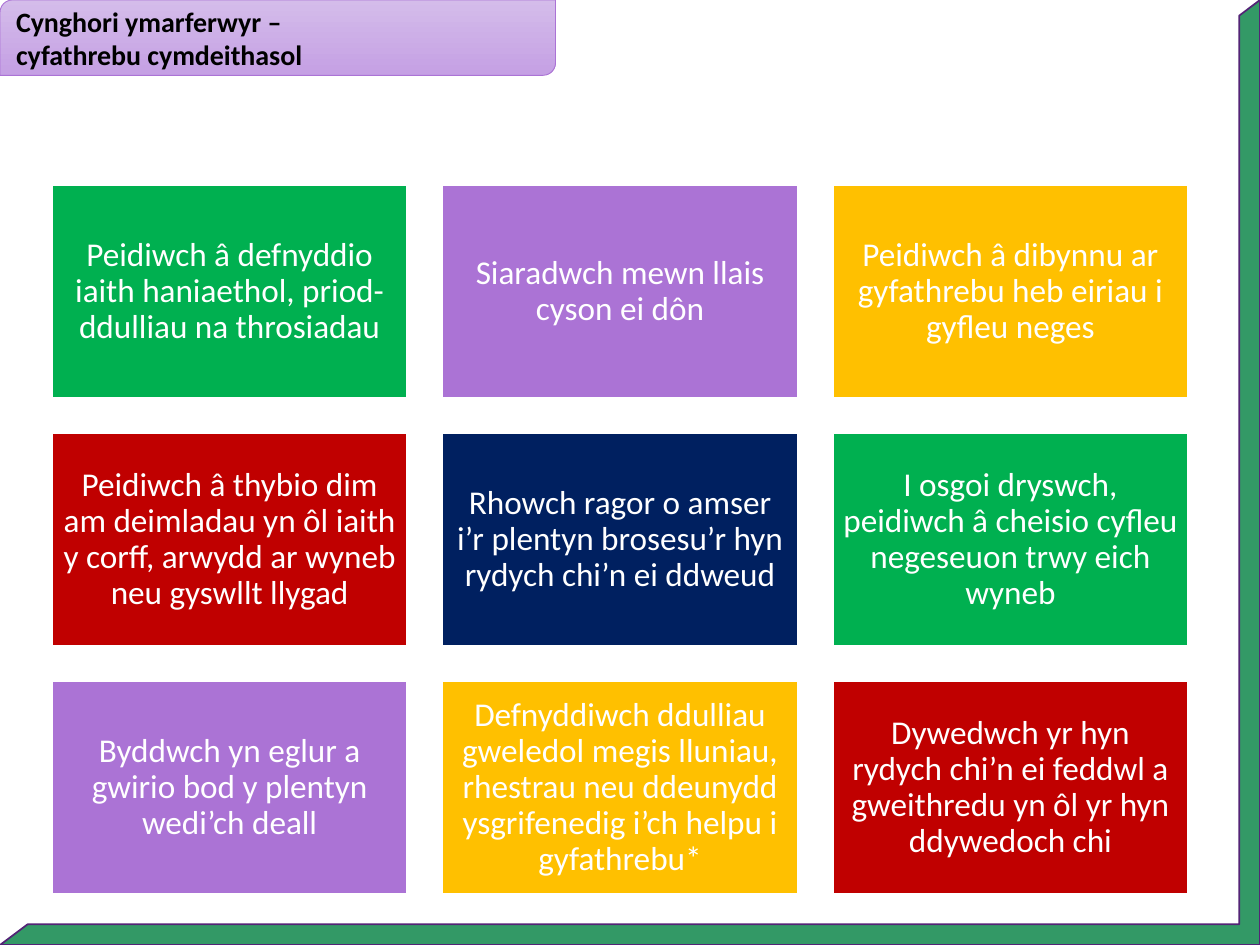
from pptx import Presentation
from pptx.dml.color import RGBColor
from pptx.enum.shapes import MSO_SHAPE
from pptx.enum.text import MSO_ANCHOR, PP_ALIGN
from pptx.util import Cm, Pt

WHITE = RGBColor(0xFF, 0xFF, 0xFF)
BLACK = RGBColor(0x00, 0x00, 0x00)
GREEN = RGBColor(0x00, 0xB0, 0x50)
PURPLE = RGBColor(0xAB, 0x73, 0xD5)
AMBER = RGBColor(0xFF, 0xC0, 0x00)
RED = RGBColor(0xC0, 0x00, 0x00)
NAVY = RGBColor(0x00, 0x20, 0x60)
FRAME_GREEN = RGBColor(0x33, 0x99, 0x66)
FRAME_LINE = RGBColor(0x53, 0x24, 0x76)
LILAC_LIGHT = RGBColor(0xD4, 0xBC, 0xEA)
LILAC_DARK = RGBColor(0xC5, 0xA0, 0xE4)

SLIDE_W, SLIDE_H = 25.4, 19.05
COLUMNS = 3
CARD_W, CARD_H, GAP = 7.16, 4.29, 0.71
GRID_LEFT, GRID_TOP = 1.05, 3.73

TITLE = ["Cynghori ymarferwyr –", "cyfathrebu cymdeithasol"]
CARDS = [
    ("Peidiwch â defnyddio iaith haniaethol, priod-ddulliau na throsiadau", GREEN),
    ("Siaradwch mewn llais cyson ei dôn", PURPLE),
    ("Peidiwch â dibynnu ar gyfathrebu heb eiriau i gyfleu neges", AMBER),
    ("Peidiwch â thybio dim am deimladau yn ôl iaith y corff, "
     "arwydd ar wyneb neu gyswllt llygad", RED),
    ("Rhowch ragor o amser i’r plentyn brosesu’r hyn rydych chi’n ei ddweud", NAVY),
    ("I osgoi dryswch, peidiwch â cheisio cyfleu negeseuon trwy eich wyneb", GREEN),
    ("Byddwch yn eglur a gwirio bod y plentyn wedi’ch deall", PURPLE),
    ("Defnyddiwch ddulliau gweledol megis lluniau, rhestrau neu ddeunydd "
     "ysgrifenedig i’ch helpu i gyfathrebu*", AMBER),
    ("Dywedwch yr hyn rydych chi’n ei feddwl a gweithredu yn ôl "
     "yr hyn ddywedoch chi", RED),
]


class SlideBuilder:
    font = "Calibri"

    def __init__(self, slide):
        self.slide = slide

    def shape(self, kind, left, top, width, height, line, line_width):
        sp = self.slide.shapes.add_shape(kind, Cm(left), Cm(top), Cm(width), Cm(height))
        sp.shadow.inherit = False
        sp.line.color.rgb = line
        sp.line.width = Pt(line_width)
        return sp

    def text(self, sp, lines, size, color, align, bold=False, spacing=1.0):
        tf = sp.text_frame
        tf.word_wrap = True
        tf.vertical_anchor = MSO_ANCHOR.MIDDLE
        for i, line in enumerate(lines):
            p = tf.add_paragraph() if i else tf.paragraphs[0]
            p.alignment = align
            p.line_spacing = spacing
            r = p.add_run()
            r.text = line
            r.font.name = self.font
            r.font.size = Pt(size)
            r.font.bold = bold
            r.font.color.rgb = color

    def frame(self):
        sp = self.shape(MSO_SHAPE.HALF_FRAME, 0, 0, SLIDE_W, SLIDE_H, FRAME_LINE, 1)
        sp.adjustments[0] = sp.adjustments[1] = 0.022
        sp.rotation = 180
        sp.fill.solid()
        sp.fill.fore_color.rgb = FRAME_GREEN

    def card(self, left, top, text, color):
        sp = self.shape(MSO_SHAPE.RECTANGLE, left, top, CARD_W, CARD_H, WHITE, 1)
        sp.fill.solid()
        sp.fill.fore_color.rgb = color
        tf = sp.text_frame
        tf.margin_left = tf.margin_right = tf.margin_top = tf.margin_bottom = Cm(0.2)
        self.text(sp, [text], 19, WHITE, PP_ALIGN.CENTER, spacing=0.9)

    def title(self, lines):
        sp = self.shape(MSO_SHAPE.ROUND_2_DIAG_RECTANGLE, 0, 0, 11.2, 1.52, PURPLE, 0.5)
        sp.adjustments[0] = 0.167
        sp.fill.gradient()
        sp.fill.gradient_angle = 270
        for stop, color in zip(sp.fill.gradient_stops, (LILAC_LIGHT, LILAC_DARK)):
            stop.color.rgb = color
        self.text(sp, lines, 16, BLACK, PP_ALIGN.LEFT, bold=True)


def main():
    prs = Presentation()
    prs.slide_width, prs.slide_height = Cm(SLIDE_W), Cm(SLIDE_H)
    s = SlideBuilder(prs.slides.add_slide(prs.slide_layouts[6]))

    # Border along the right and bottom edges
    s.frame()

    # Grid of advice cards
    for i, (text, color) in enumerate(CARDS):
        row, col = divmod(i, COLUMNS)
        s.card(GRID_LEFT + col * (CARD_W + GAP), GRID_TOP + row * (CARD_H + GAP),
               text, color)

    # Title tab
    s.title(TITLE)

    prs.save("out.pptx")


if __name__ == "__main__":
    main()
